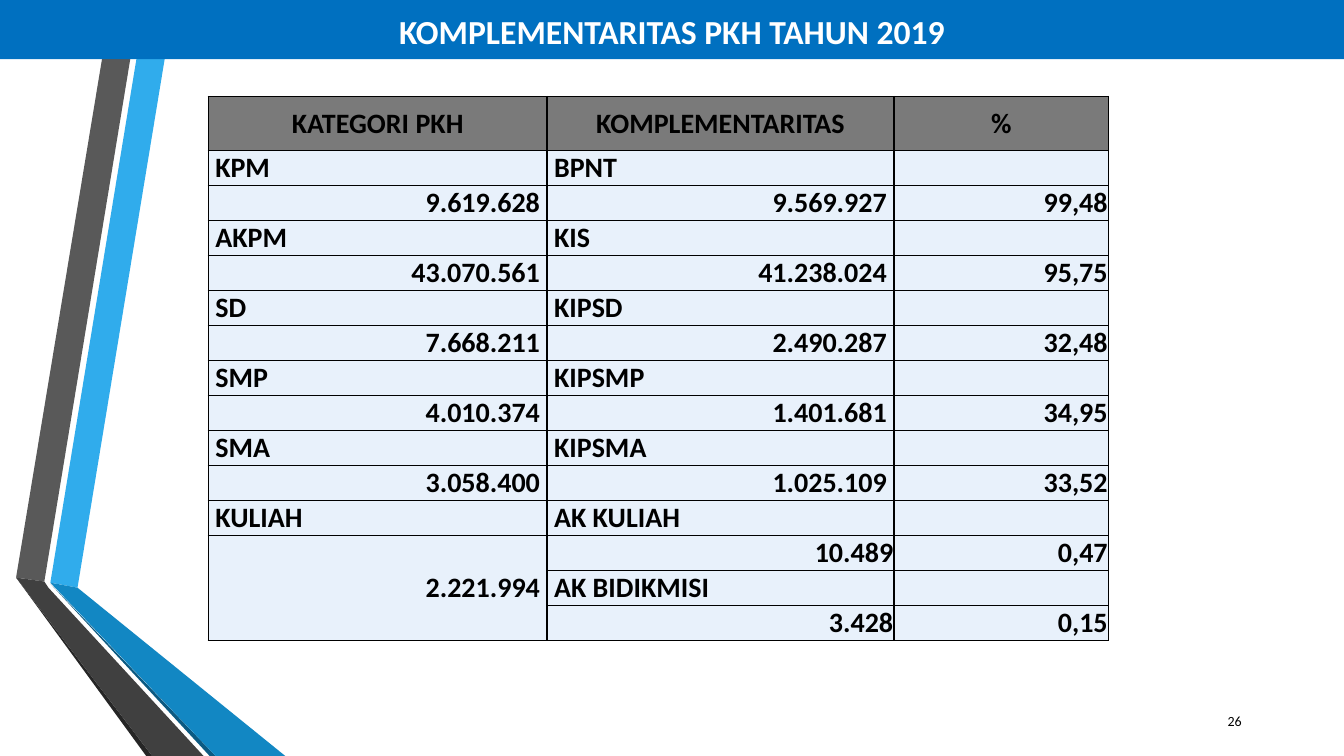
from dataclasses import dataclass

from lxml import etree
from pptx import Presentation
from pptx.dml.color import RGBColor
from pptx.enum.shapes import MSO_SHAPE
from pptx.enum.text import MSO_ANCHOR, PP_ALIGN
from pptx.oxml.ns import qn
from pptx.util import Pt

LEFT, CENTER, RIGHT = PP_ALIGN.LEFT, PP_ALIGN.CENTER, PP_ALIGN.RIGHT
TOP, MIDDLE, BOTTOM = MSO_ANCHOR.TOP, MSO_ANCHOR.MIDDLE, MSO_ANCHOR.BOTTOM
RECTANGLE = MSO_SHAPE.RECTANGLE


@dataclass(frozen=True)
class Theme:
    """Colours, type sizes and cell spacing of the slide."""

    font: str = "Calibri"
    title_size: float = 24
    table_size: float = 20
    number_size: float = 10
    band: str = "0070C0"
    light: str = "FFFFFF"
    dark: str = "000000"
    header: str = "7A7A7A"
    body: str = "E8F1FB"
    inset: float = 0.5
    padding: float = 5


THEME = Theme()
WIDTH, HEIGHT = 960, 540
COLUMN_WIDTHS = (242, 247.8, 153.2)
HEADER_HEIGHT, ROW_HEIGHT = 38.4, 24.9

RIBBONS = (
    ("30ACEC", ((36, 416.2), (55.4, 419.8), (124.6, 0), (104.4, 0))),
    ("595959", ((100, 0), (79.9, 0), (11.5, 412.6), (31.7, 415.4))),
    ("262626", ((11.5, 412.6), (104.4, HEIGHT), (108.7, HEIGHT))),
    ("0C5A82", ((36, 416.9), (149.8, HEIGHT), (154.1, HEIGHT))),
    ("1287C3", ((36, 416.2), (154.1, HEIGHT), (203.8, HEIGHT), (55.4, 419.8))),
    ("404040", ((145.4, HEIGHT), (34.6, 419.8), (31.7, 415.4), (11.5, 412.6),
                (108.7, HEIGHT))),
)

HEADINGS = ("KATEGORI PKH", "KOMPLEMENTARITAS", "%")
GROUPS = (
    ("KPM", "9.619.628", "BPNT", "9.569.927", "99,48"),
    ("AKPM", "43.070.561", "KIS", "41.238.024", "95,75"),
    ("SD", "7.668.211", "KIPSD", "2.490.287", "32,48"),
    ("SMP", "4.010.374", "KIPSMP", "1.401.681", "34,95"),
    ("SMA", "3.058.400", "KIPSMA", "1.025.109", "33,52"),
    ("KULIAH", "2.221.994", "AK KULIAH", "10.489", "0,47"),
    ("", "", "AK BIDIKMISI", "3.428", "0,15"),
)
UNPADDED_NUMBERS = ("10.489", "3.428")


def add_text(paragraph, text, size, color, align, bold=True):
    """Add one formatted run to a paragraph."""
    paragraph.alignment = align
    run = paragraph.add_run()
    run.text = text
    run.font.name = THEME.font
    run.font.size = Pt(size)
    run.font.bold = bold
    run.font.color.rgb = RGBColor.from_string(color)


def paint(shape, color):
    """Give a shape a plain fill without line or shadow."""
    shape.fill.solid()
    shape.fill.fore_color.rgb = RGBColor.from_string(color)
    shape.line.fill.background()
    shape.shadow.inherit = False


def add_ribbon(slide, color, points):
    """Draw one closed piece of the folded ribbons."""
    start, *others = [(Pt(x), Pt(y)) for x, y in points]
    builder = slide.shapes.build_freeform(*start, scale=1.0)
    builder.add_line_segments(others, close=True)
    paint(builder.convert_to_shape(), color)


def add_title_band(slide, text):
    """Add the full-width title band."""
    band = slide.shapes.add_shape(RECTANGLE, 0, 0, Pt(WIDTH), Pt(42.3))
    paint(band, THEME.band)
    frame = band.text_frame
    frame.word_wrap = True
    frame.vertical_anchor = BOTTOM
    frame.margin_left = frame.margin_right = Pt(9.4)
    frame.margin_top = frame.margin_bottom = Pt(5)
    paragraph = frame.paragraphs[0]
    paragraph.line_spacing = 0.9
    add_text(paragraph, text, THEME.title_size, THEME.light, CENTER)


def add_slide_number(slide, text):
    """Add the slide number at the lower right."""
    box = slide.shapes.add_textbox(Pt(678), Pt(500.6), Pt(216), Pt(28.8))
    frame = box.text_frame
    frame.word_wrap = True
    frame.vertical_anchor = MIDDLE
    add_text(frame.paragraphs[0], text, THEME.number_size, THEME.dark, RIGHT, False)


def add_borders(cell):
    """Put a thin dark line on every side of a cell."""
    properties = cell._tc.get_or_add_tcPr()
    for side in ("a:lnL", "a:lnR", "a:lnT", "a:lnB"):
        line = etree.SubElement(properties, qn(side), w=str(Pt(1)))
        fill = etree.SubElement(line, qn("a:solidFill"))
        etree.SubElement(fill, qn("a:srgbClr"), val=THEME.dark)


def fill_cell(cell, text, align, color=THEME.body, anchor=TOP, padded=True):
    """Style a cell and write its text."""
    add_borders(cell)
    cell.fill.solid()
    cell.fill.fore_color.rgb = RGBColor.from_string(color)
    cell.vertical_anchor = anchor
    cell.margin_left = cell.margin_right = Pt(THEME.padding if padded else THEME.inset)
    cell.margin_top, cell.margin_bottom = Pt(THEME.inset), 0
    if text:
        paragraph = cell.text_frame.paragraphs[0]
        add_text(paragraph, text, THEME.table_size, THEME.dark, align)


def add_table(slide):
    """Add the table with a label row and a number row per group."""
    row_count = 1 + 2 * len(GROUPS)
    height = HEADER_HEIGHT + ROW_HEIGHT * (row_count - 1)
    table = slide.shapes.add_table(row_count, len(HEADINGS), Pt(148.8), Pt(69),
                                   Pt(sum(COLUMN_WIDTHS)), Pt(height)).table
    table.first_row = table.horz_banding = False
    for column, width in zip(table.columns, COLUMN_WIDTHS):
        column.width = Pt(width)
    for index, row in enumerate(table.rows):
        row.height = Pt(ROW_HEIGHT if index else HEADER_HEIGHT)

    for column, heading in enumerate(HEADINGS):
        fill_cell(table.cell(0, column), heading, CENTER, THEME.header, MIDDLE)
    for index, (category, total, program, covered, percent) in enumerate(GROUPS):
        row = 1 + 2 * index
        for column, label in enumerate((category, program, "")):
            fill_cell(table.cell(row, column), label, LEFT)
        for column, number in enumerate((total, covered, percent)):
            padded = column < 2 and number not in UNPADDED_NUMBERS
            anchor = MIDDLE if column == 0 else TOP
            fill_cell(table.cell(row + 1, column), number, RIGHT,
                      anchor=anchor, padded=padded)
    table.cell(row_count - 3, 0).merge(table.cell(row_count - 1, 0))


def main():
    """Build the slide and save it."""
    presentation = Presentation()
    presentation.slide_width, presentation.slide_height = Pt(WIDTH), Pt(HEIGHT)
    slide = presentation.slides.add_slide(presentation.slide_layouts[6])
    for color, points in RIBBONS:
        add_ribbon(slide, color, points)
    add_table(slide)
    add_title_band(slide, "KOMPLEMENTARITAS PKH TAHUN 2019")
    add_slide_number(slide, "26")
    presentation.save("out.pptx")


if __name__ == "__main__":
    main()
